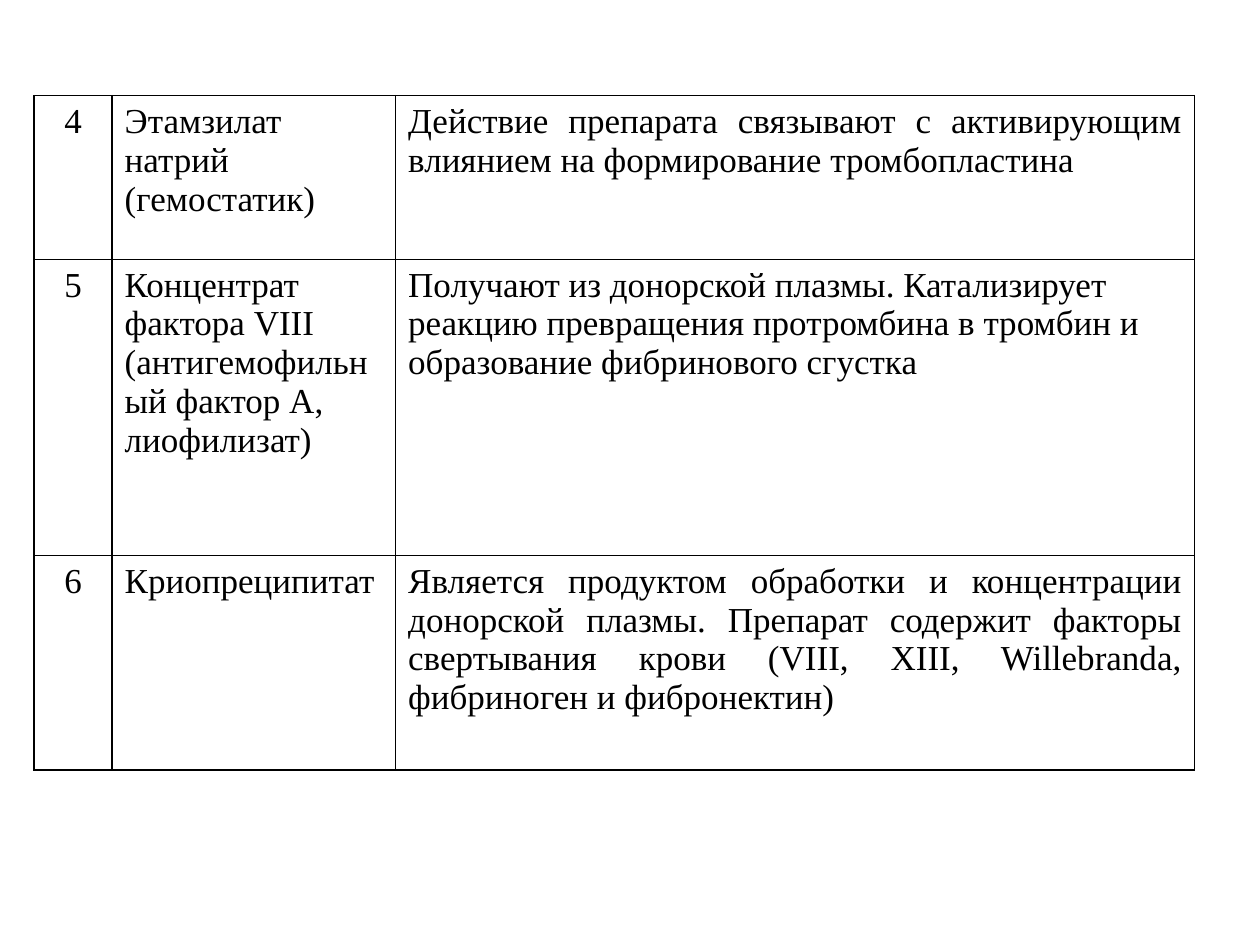
from lxml.etree import SubElement
from pptx import Presentation
from pptx.dml.color import RGBColor
from pptx.enum.text import PP_ALIGN as Align
from pptx.oxml.ns import qn
from pptx.util import Inches, Pt

BLACK = RGBColor(0, 0, 0)
FONT = {"name": "Times New Roman", "size": Pt(20), "bold": False}
LEFT, TOP = 0.27, 0.76
WIDTHS = [0.62, 2.25, 6.34]
HEIGHTS = [1.3, 2.35, 1.7]

# number, drug, action, alignment of the action
DRUGS = [
    ("4", "Этамзилат натрий (гемостатик)",
     "Действие препарата связывают с активирующим влиянием на формирование "
     "тромбопластина", Align.JUSTIFY),
    ("5", "Концентрат фактора VIII (антигемофильный фактор А, лиофилизат)",
     "Получают из донорской плазмы. Катализирует реакцию превращения "
     "протромбина в тромбин и образование фибринового сгустка", Align.LEFT),
    ("6", "Криопреципитат",
     "Является продуктом обработки и концентрации донорской плазмы. Препарат "
     "содержит факторы свертывания крови (VIII, XIII, Willebranda, "
     "фибриноген и фибронектин)", Align.JUSTIFY),
]


def add_border(cell):
    props = cell._tc.get_or_add_tcPr()
    for side in ("a:lnL", "a:lnR", "a:lnT", "a:lnB"):
        line = SubElement(props, qn(side), w=str(Pt(1)))
        fill = SubElement(line, qn("a:solidFill"))
        SubElement(fill, qn("a:srgbClr"), val=str(BLACK))


def fill_cell(cell, text, align):
    add_border(cell)
    cell.fill.background()
    cell.text = text
    para = cell.text_frame.paragraphs[0]
    para.alignment = align
    font = para.runs[0].font
    for key, value in FONT.items():
        setattr(font, key, value)
    font.color.rgb = BLACK


def main():
    deck = Presentation()
    deck.slide_width, deck.slide_height = Inches(10), Inches(7.5)
    slide = deck.slides.add_slide(deck.slide_layouts[6])
    table = slide.shapes.add_table(
        len(HEIGHTS), len(WIDTHS), Inches(LEFT), Inches(TOP),
        Inches(sum(WIDTHS)), Inches(sum(HEIGHTS))).table
    table.first_row = table.horz_banding = False
    for col, width in zip(table.columns, WIDTHS):
        col.width = Inches(width)
    for row, height, (*texts, align) in zip(table.rows, HEIGHTS, DRUGS):
        row.height = Inches(height)
        for cell, text, side in zip(row.cells, texts,
                                    (Align.CENTER, Align.LEFT, align)):
            fill_cell(cell, text, side)
    deck.save("out.pptx")


if __name__ == "__main__":
    main()
